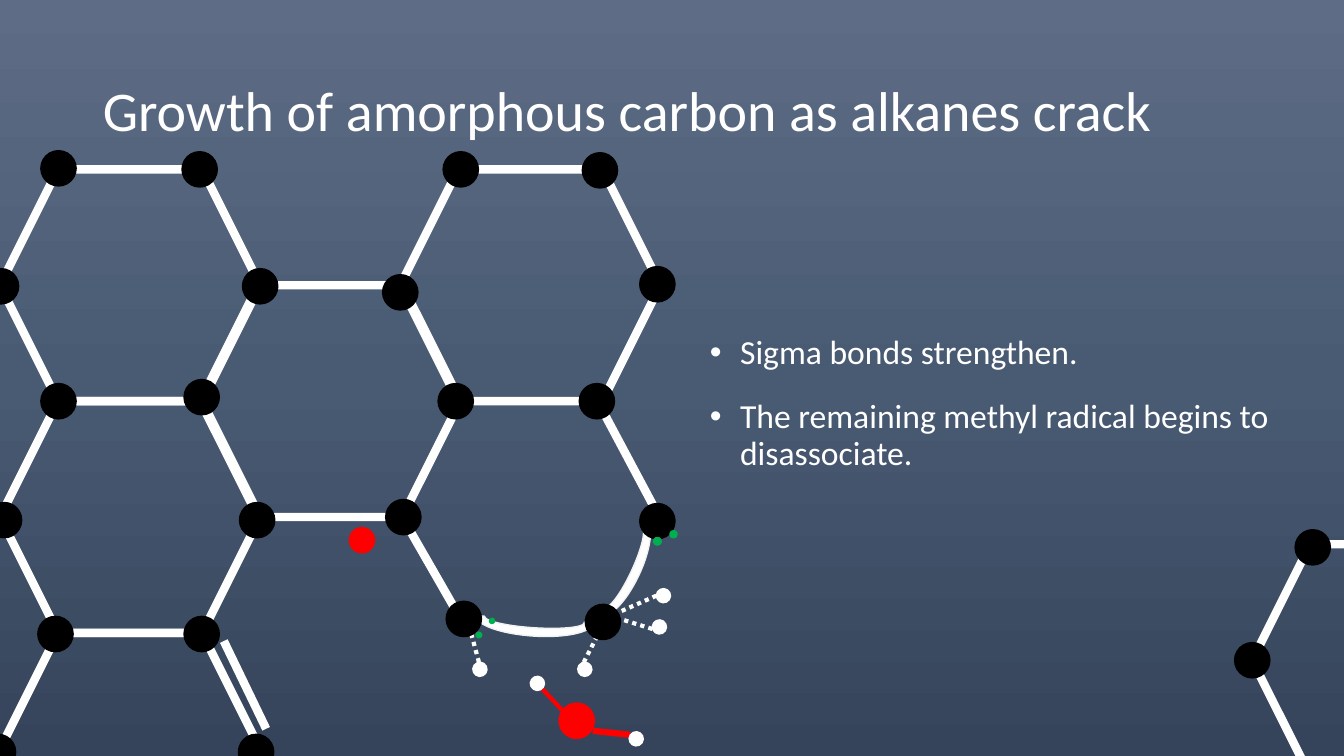
from copy import deepcopy
from dataclasses import dataclass

from lxml.etree import SubElement
from pptx import Presentation
from pptx.dml.color import RGBColor
from pptx.enum.dml import MSO_LINE as Dash
from pptx.enum.shapes import MSO_CONNECTOR as Link, MSO_SHAPE as Kind
from pptx.enum.text import MSO_ANCHOR as Anchor, PP_ALIGN as Align
from pptx.oxml.ns import qn
from pptx.util import Inches, Pt

WIDE, HIGH = Inches(13.33), Inches(7.5)
COL, ROW = WIDE / 133.3, HIGH / 75  # page grid: 133.3 columns by 75 rows
HUES = {"white": "FFFFFF", "pale": "F2F2F2", "black": "000000", "red": "FF0000",
        "green": "00B050", "top": "5E6D85", "mid": "495A73", "low": "35445A"}
FONT = "Calibri"
RING_W, RING_H = 25.8, 23
STEP_X, STEP_Y = 19.85, 11.5  # one honeycomb column and half a ring
TOP = 16.8
TILT = 34.2


@dataclass
class Bond:
    x1: float
    y1: float
    x2: float
    y2: float
    hue: str = "white"
    wide: float = 6
    dots: bool = False


@dataclass
class Atom:
    """A round atom or electron, placed by its centre."""
    x: float
    y: float
    size: float = 3.5
    hue: str = "black"
    tilt: float = 0


@dataclass
class Arc:
    x: float
    y: float
    wide: float
    high: float
    tilt: float
    start: float


RINGS = [(col * STEP_X, TOP + row * STEP_Y)
         for col, row in [(2, 0), (1, 1), (0, 2), (0, 4), (0, 0)]] + [(124.2, 54)]

ARCS = [Arc(47.2, 59.8, 11.6, 3.3, 183.7, 107.564),
        Arc(56.7, 54.6, 10.3, 3.4, 115, 108)]

BONDS = [
    Bond(39.9, 51.3, 45.7, 61.4),
    Bond(59.7, 40.6, 65.4, 51.3),
    Bond(22.2, 63.6, 26.4, 72.3),
    Bond(55.8, 70.5, 52.9, 67.4, "red", 3),
    Bond(58.8, 72.5, 62.5, 72.9, "red", 4.5),
] + [Bond(*ends, wide=3, dots=True) for ends in [
    (47.5, 65.7, 46.4, 61.6), (65.1, 59.1, 59.2, 61.7),
    (57.9, 65.7, 59.7, 62.2), (64.7, 62.4, 61.5, 61.4)]]

CARBONS = [Atom(x, y) for x, y in [
    (59.5, 16.9), (65.2, 28.2), (45.7, 16.8), (39.7, 29), (19.8, 16.8), (25.8, 28.4),
    (45.2, 39.8), (59.2, 39.8), (65.2, 51.7), (46, 61.4), (40, 51.3), (25.5, 51.6),
    (20, 39.4), (5.8, 39.8), (0.1, 28.4), (5.8, 16.7), (20, 62.9), (5.5, 62.9),
    (0.4, 51.6), (124.2, 65.5), (130.2, 54.3), (-0.2, 74.6), (25.4, 74.6)]]
LOOSE = [Atom(59.8, 61.7, tilt=TILT), Atom(57.2, 71.5, 3.5, "red", TILT),
         Atom(35.9, 53.6, 2.5, "red", TILT)]
HYDROGENS = [Atom(x, y, 1.4, "white", TILT) for x, y in [
    (65.4, 62.2), (58, 66.4), (53.3, 67.8), (63.1, 73.3), (65.8, 59.1), (47.6, 66.4)]]
ELECTRONS = [Atom(x, y, size, "green", TILT) for x, y, size in [
    (47.5, 63, 0.55), (48.8, 61.6, 0.5), (66.8, 53, 0.7), (65.2, 53.7, 0.75)]]

POINTS = ["Sigma bonds strengthen.",
          "The remaining methyl radical begins to disassociate."]


def rgb(hue: str) -> RGBColor:
    return RGBColor.from_string(HUES[hue])


def frame(x: float, y: float, wide: float, high: float) -> tuple:
    """Turn a box in grid columns and rows into slide lengths."""
    return round(x * COL), round(y * ROW), round(wide * COL), round(high * ROW)


def paint(slide) -> None:
    """Fill the background from top to bottom with three shades."""
    fill = slide.background.fill
    fill.gradient()
    fill.gradient_angle = 270
    stops = next(slide.element.iter(qn("a:gsLst")))
    stops.append(deepcopy(stops[0]))
    for stop, hue, spot in zip(fill.gradient_stops, ("top", "mid", "low"), (0, 0.5, 1)):
        stop.color.rgb = rgb(hue)
        stop.position = spot


def add_shape(slide, kind: Kind, box: tuple, fill: str | None, edge: str,
              wide: float = 1, tilt: float = 0):
    shape = slide.shapes.add_shape(kind, *frame(*box))
    shape.shadow.inherit = False
    if fill:
        shape.fill.solid()
        shape.fill.fore_color.rgb = rgb(fill)
    else:
        shape.fill.background()
    shape.line.color.rgb = rgb(edge)
    shape.line.width = Pt(wide)
    shape.rotation = tilt
    return shape


def add_arc(slide, arc: Arc) -> None:
    shape = add_shape(slide, Kind.BLOCK_ARC, (arc.x, arc.y, arc.wide, arc.high),
                      "white", "pale", tilt=arc.tilt)
    for i, value in enumerate((arc.start, 0, 0.25)):
        shape.adjustments[i] = value


def add_atom(slide, atom: Atom) -> None:
    half = atom.size / 2
    add_shape(slide, Kind.OVAL, (atom.x - half, atom.y - half, atom.size, atom.size),
              atom.hue, atom.hue, tilt=atom.tilt)


def add_bond(slide, bond: Bond) -> None:
    ends = frame(bond.x1, bond.y1, bond.x2, bond.y2)
    line = slide.shapes.add_connector(Link.STRAIGHT, *ends)
    SubElement(line.element.spPr, qn("a:effectLst"))
    line.line.color.rgb = rgb(bond.hue)
    line.line.width = Pt(bond.wide)
    if bond.dots:
        line.line.dash_style = Dash.ROUND_DOT


def place(holder, box: tuple, anchor: Anchor):
    """Move a placeholder and return its text frame."""
    holder.left, holder.top, holder.width, holder.height = frame(*box)
    text = holder.text_frame
    text.word_wrap = True
    text.vertical_anchor = anchor
    return text


def write(para, words: str, size: float) -> None:
    para.alignment = Align.LEFT
    para.line_spacing = 0.9
    run = para.add_run()
    run.text = words
    run.font.name = FONT
    run.font.size = Pt(size)
    run.font.color.rgb = rgb("white")


def add_list(text, points: list[str]) -> None:
    for i, point in enumerate(points):
        para = text.add_paragraph() if i else text.paragraphs[0]
        write(para, point, 24)
        para.space_before = Pt(20)
        props = para._p.get_or_add_pPr()
        props.set("marL", str(Inches(0.3)))
        props.set("indent", str(-Inches(0.3)))
        SubElement(props, qn("a:buFont")).set("typeface", "Arial")
        SubElement(props, qn("a:buChar")).set("char", "•")


def main() -> None:
    deck = Presentation()
    deck.slide_width, deck.slide_height = WIDE, HIGH
    slide = deck.slides.add_slide(deck.slide_layouts[1])
    paint(slide)
    title = place(slide.shapes.title, (9.2, 4, 115, 14.5), Anchor.MIDDLE)
    write(title.paragraphs[0], "Growth of amorphous carbon as alkanes crack", 40)
    body = place(slide.placeholders[1], (69.4, 32.8, 62.7, 20.8), Anchor.TOP)
    add_list(body, POINTS)
    for arc in ARCS:
        add_arc(slide, arc)
    for x, y in RINGS:
        add_shape(slide, Kind.HEXAGON, (x, y, RING_W, RING_H), None, "white", 6)
    for bond in BONDS:
        add_bond(slide, bond)
    for atom in CARBONS + LOOSE + HYDROGENS + ELECTRONS:
        add_atom(slide, atom)
    deck.save("out.pptx")


if __name__ == "__main__":
    main()
